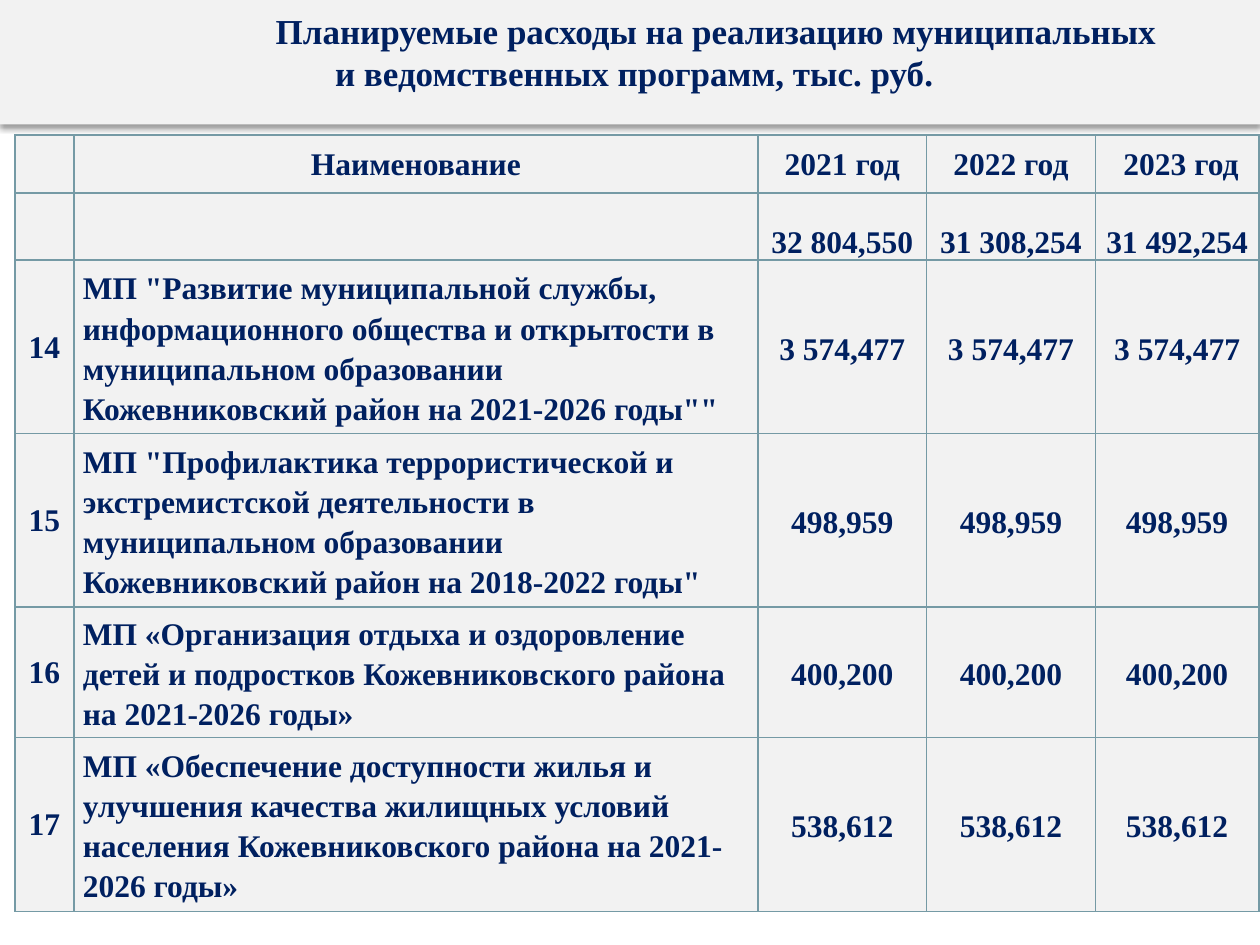
from lxml import etree
from pptx import Presentation
from pptx import util as u
from pptx.dml.color import RGBColor
from pptx.enum import shapes, text
from pptx.oxml import ns

NAVY = RGBColor(0x00, 0x20, 0x60)
PALE_GREY = RGBColor(0xF2, 0xF2, 0xF2)
BORDER = RGBColor(0x75, 0x9A, 0xA5)
BLACK = RGBColor(0x00, 0x00, 0x00)

CENTER, LEFT = text.PP_ALIGN.CENTER, text.PP_ALIGN.LEFT
MIDDLE, BOTTOM = text.MSO_ANCHOR.MIDDLE, text.MSO_ANCHOR.BOTTOM

TITLE = [
    ("Планируемые расходы на реализацию муниципальных", 3.47),
    (" и ведомственных программ, тыс. руб.", 0),
]
COLUMN_WIDTHS = [1.19, 13.79, 3.4, 3.4, 3.3]
ROW_HEIGHTS = [1.17, 1.35, 3.5, 3.5, 2.63, 3.5]
HEADER = ["", "Наименование", "2021 год", "2022 год", " 2023 год"]
TOTALS = ["", "", "32 804,550", "31 308,254", "31 492,254"]
PROGRAMS = [
    ("14", 'МП "Развитие муниципальной службы, информационного общества и открытости '
           'в муниципальном образовании Кожевниковский район на 2021-2026 годы""', "3 574,477"),
    ("15", 'МП "Профилактика террористической и экстремистской деятельности '
           'в муниципальном образовании Кожевниковский район на 2018-2022 годы"', "498,959"),
    ("16", "МП «Организация отдыха и оздоровление детей и подростков "
           "Кожевниковского района на 2021-2026 годы»", "400,200"),
    ("17", "МП «Обеспечение доступности жилья и улучшения качества жилищных условий "
           "населения Кожевниковского района на 2021-2026 годы»", "538,612"),
]

TIGHT = {"margin_left": u.Cm(0.03), "margin_right": u.Cm(0.03),
         "margin_top": u.Cm(0.03), "margin_bottom": 0, "vertical_anchor": MIDDLE}
TIGHT_BOTTOM = {**TIGHT, "vertical_anchor": BOTTOM}
ROOMY = {"margin_left": u.Cm(0.18), "margin_right": u.Cm(0.18),
         "margin_top": 0, "margin_bottom": 0, "vertical_anchor": MIDDLE}
CENTERED = {"alignment": CENTER}
CENTERED_LOOSE = {"alignment": CENTER, "line_spacing": 1.15}
LEFT_LOOSE = {"alignment": LEFT, "line_spacing": 1.15}


def apply_format(target, values):
    """Set every attribute named in a dict of format values."""
    for name, value in values.items():
        setattr(target, name, value)


def write_paragraph(paragraph, wording, size, values):
    """Write bold navy text into a paragraph."""
    apply_format(paragraph, values)
    font_values = {"name": "Times New Roman", "size": u.Pt(size), "bold": True}
    if wording:
        run = paragraph.add_run()
        run.text = wording
        apply_format(run.font, font_values)
        run.font.color.rgb = NAVY


def add_shadow(shape):
    """Give a shape a soft shadow that falls straight down."""
    shape.shadow.inherit = False
    effects = shape.element.spPr.find(ns.qn("a:effectLst"))
    shadow = etree.SubElement(effects, ns.qn("a:outerShdw"), blurRad=str(u.Pt(3.1)),
                              dist=str(u.Pt(2)), dir="5400000", rotWithShape="0")
    color = etree.SubElement(shadow, ns.qn("a:srgbClr"), val=str(BLACK))
    etree.SubElement(color, ns.qn("a:alpha"), val="38000")


def add_title_band(slide):
    """Add the shaded band that carries the two title lines."""
    band = slide.shapes.add_shape(shapes.MSO_SHAPE.RECTANGLE, 0, 0, u.Cm(25.4), u.Cm(2.51))
    band.fill.solid()
    band.fill.fore_color.rgb = PALE_GREY
    band.line.fill.background()
    add_shadow(band)
    frame = band.text_frame
    apply_format(frame, {"word_wrap": True, "margin_top": u.Cm(0.2),
                         "vertical_anchor": text.MSO_ANCHOR.TOP})
    for index, (wording, indent) in enumerate(TITLE):
        paragraph = frame.add_paragraph() if index else frame.paragraphs[0]
        write_paragraph(paragraph, wording, 20, CENTERED)
        paragraph._p.get_or_add_pPr().set("marL", str(u.Cm(indent)))


def add_borders(cell):
    """Draw a thin line on all four sides of a cell."""
    properties = cell._tc.get_or_add_tcPr()
    for index, side in enumerate(("lnL", "lnR", "lnT", "lnB")):
        line = etree.Element(ns.qn(f"a:{side}"), w=str(u.Pt(1)))
        fill = etree.SubElement(line, ns.qn("a:solidFill"))
        etree.SubElement(fill, ns.qn("a:srgbClr"), val=str(BORDER))
        properties.insert(index, line)


def fill_cell(cell, wording, cell_values, paragraph_values):
    """Write, shade and outline one table cell."""
    apply_format(cell, cell_values)
    write_paragraph(cell.text_frame.paragraphs[0], wording, 18, paragraph_values)
    cell.fill.solid()
    cell.fill.fore_color.rgb = PALE_GREY
    add_borders(cell)


def add_expense_table(slide):
    """Add the table of programs and their yearly expenses."""
    frame = slide.shapes.add_table(len(ROW_HEIGHTS), len(COLUMN_WIDTHS), u.Cm(0.3), u.Cm(2.72),
                                   u.Cm(sum(COLUMN_WIDTHS)), u.Cm(sum(ROW_HEIGHTS)))
    table = frame.table
    apply_format(table, {"first_row": False, "horz_banding": False})
    for column, width in zip(table.columns, COLUMN_WIDTHS):
        column.width = u.Cm(width)
    for row, height in zip(table.rows, ROW_HEIGHTS):
        row.height = u.Cm(height)
    program_formats = [(TIGHT, CENTERED), (ROOMY, LEFT_LOOSE)] + [(ROOMY, CENTERED_LOOSE)] * 3
    content = [(HEADER, [(TIGHT, CENTERED)] * 5), (TOTALS, [(TIGHT_BOTTOM, CENTERED)] * 5)]
    content += [([number, name] + [amount] * 3, program_formats)
                for number, name, amount in PROGRAMS]
    for row, (wordings, formats) in zip(table.rows, content):
        for cell, wording, values in zip(row.cells, wordings, formats):
            fill_cell(cell, wording, *values)


def main():
    """Build the slide and save it."""
    presentation = Presentation()
    apply_format(presentation, {"slide_width": u.Cm(25.4), "slide_height": u.Cm(19.05)})
    slide = presentation.slides.add_slide(presentation.slide_layouts[6])
    add_title_band(slide)
    add_expense_table(slide)
    presentation.save("out.pptx")


if __name__ == "__main__":
    main()
